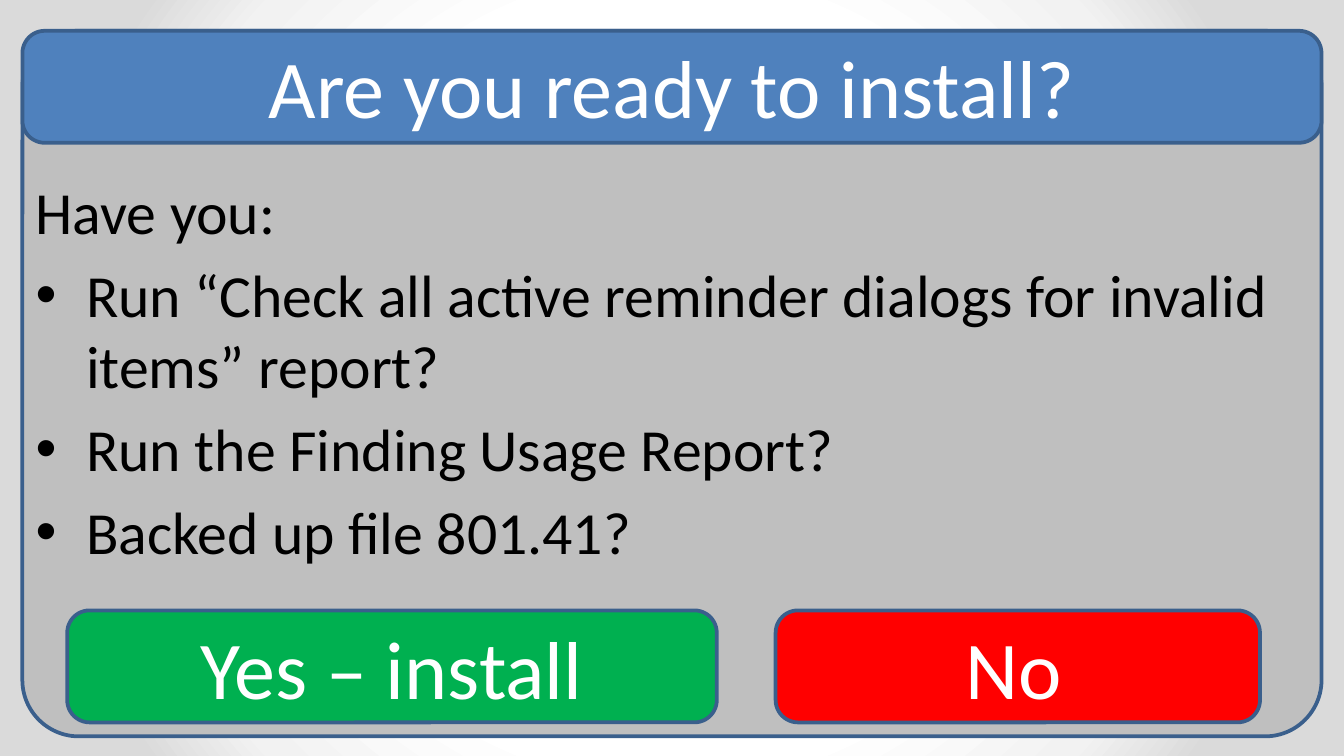
from dataclasses import dataclass

from pptx import Presentation
from pptx import oxml
from pptx.dml.color import RGBColor
from pptx.enum import shapes, text
from pptx.oxml import ns
from pptx.util import Pt


@dataclass(frozen=True)
class Theme:
    font: str = "Calibri"
    head: float = 44
    body: float = 32
    edge: str = "3A5F8C"
    panel: str = "BFBFBF"
    bar: str = "4F81BD"
    yes: str = "00B050"
    no: str = "FF0000"
    white: str = "FFFFFF"
    black: str = "000000"
    glow: tuple = ((50, "FFFFFF"), (71, "F2F2F2"), (84, "DADADA"))


THEME = Theme()


def rgb(code):
    return RGBColor.from_string(code)


def paint(slide):
    slide.background.fill.gradient()
    old = slide.element.find(".//" + ns.qn("a:gradFill"))
    stops = "".join(
        f'<a:gs pos="{pos * 1000}"><a:srgbClr val="{code}"/></a:gs>'
        for pos, code in THEME.glow
    )
    new = oxml.parse_xml(
        f'<a:gradFill {ns.nsdecls("a")} rotWithShape="1"><a:gsLst>{stops}</a:gsLst>'
        '<a:path path="circle"><a:fillToRect l="50000" t="50000" r="50000" b="50000"/>'
        "</a:path></a:gradFill>"
    )
    old.getparent().replace(old, new)


def panel(slide, box, fill, curve=0.2):
    shape = slide.shapes.add_shape(
        shapes.MSO_SHAPE.ROUNDED_RECTANGLE, *map(Pt, box)
    )
    shape.adjustments[0] = curve
    shape.shadow.inherit = False
    shape.fill.solid()
    shape.fill.fore_color.rgb = rgb(fill)
    shape.line.color.rgb = rgb(THEME.edge)
    shape.line.width = Pt(2)


def frame(slide, box, anchor=text.MSO_ANCHOR.MIDDLE):
    area = slide.shapes.add_textbox(*map(Pt, box)).text_frame
    area.word_wrap = True
    area.vertical_anchor = anchor
    return area


def write(para, words, size=THEME.head, color=THEME.white,
          align=text.PP_ALIGN.CENTER, before=0, bullet=False):
    run = para.add_run()
    run.text = words
    run.font.name = THEME.font
    run.font.size = Pt(size)
    run.font.color.rgb = rgb(color)
    para.alignment = align
    para.space_before = Pt(before)
    if bullet:
        props = para._p.get_or_add_pPr()
        props.set("marL", str(Pt(27)))
        props.set("indent", str(Pt(-27)))
        for mark in ('buFont {} typeface="Arial"', 'buChar {} char="•"'):
            props.append(oxml.parse_xml(f'<a:{mark.format(ns.nsdecls("a"))}/>'))


def label(slide, box, words):
    write(frame(slide, box).paragraphs[0], words)


def checks(slide, box, lead, items):
    area = frame(slide, box, text.MSO_ANCHOR.TOP)
    style = dict(size=THEME.body, color=THEME.black, align=text.PP_ALIGN.LEFT)
    write(area.paragraphs[0], lead, **style)
    for item in items:
        write(area.add_paragraph(), item, before=6, bullet=True, **style)


def main():
    deck = Presentation()
    deck.slide_width, deck.slide_height = Pt(720), Pt(405)
    slide = deck.slides.add_slide(deck.slide_layouts[6])
    paint(slide)

    left, wide, tall = 12, 696, 60
    panel(slide, (left, 16.5, wide, 378), THEME.panel, 0.08)
    panel(slide, (415.5, 327, 259.5, tall), THEME.no)
    panel(slide, (36, 327, 348, tall), THEME.yes)
    checks(slide, (left, 90, wide, 234), "Have you:", (
        "Run “Check all active reminder dialogs for invalid items” report?",
        "Run the Finding Usage Report?",
        "Backed up file 801.41?",
    ))
    label(slide, (415.5, 323.25, 255, 67.5), "No")
    label(slide, (69, 323.25, 282, 67.5), "Yes – install")
    panel(slide, (left, 16.5, wide, tall), THEME.bar)
    label(slide, (36, 12.25, 648, 67.5), "Are you ready to install?")

    deck.save("out.pptx")


if __name__ == "__main__":
    main()
